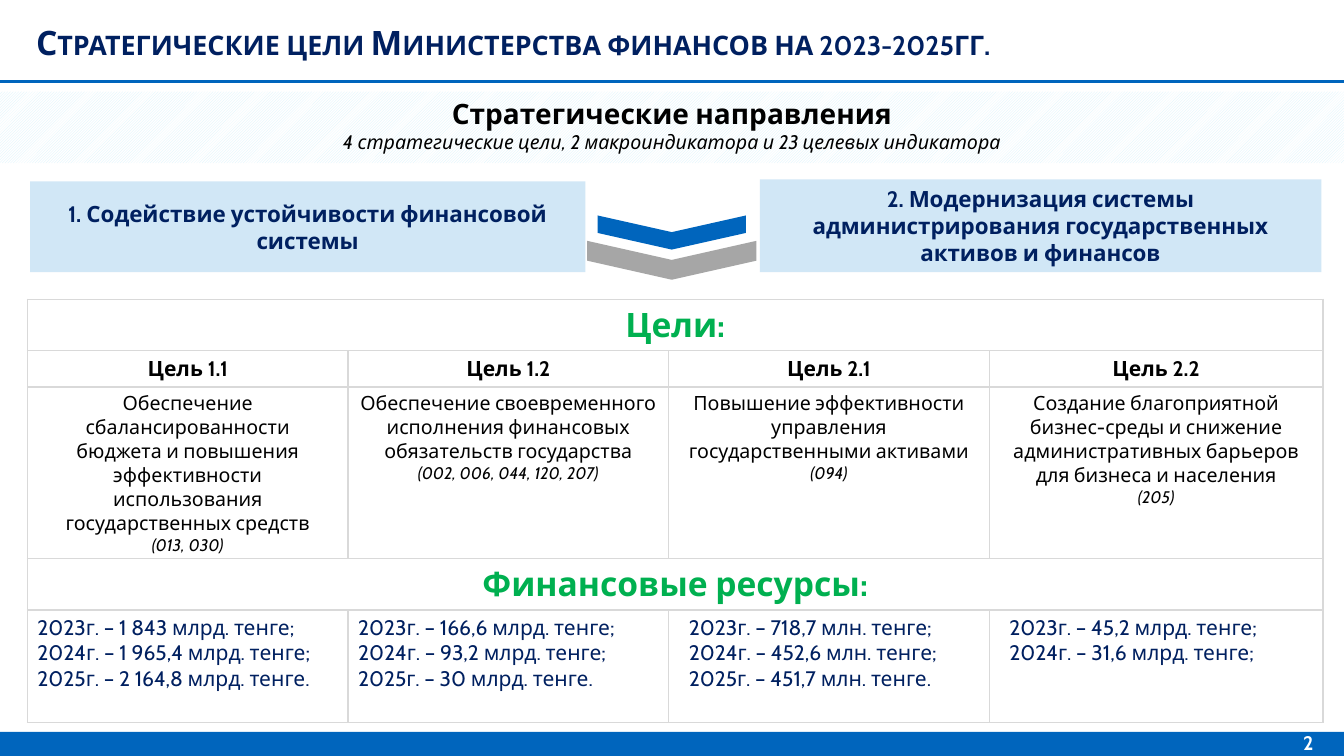
from lxml import etree
from pptx import Presentation
from pptx.dml.color import RGBColor
from pptx.enum.dml import MSO_PATTERN
from pptx.enum.shapes import MSO_CONNECTOR, MSO_SHAPE
from pptx.enum.text import MSO_ANCHOR, PP_ALIGN
from pptx.oxml import parse_xml
from pptx.oxml.ns import nsdecls, qn
from pptx.util import Cm, Pt

BLUE = RGBColor(0x00, 0x65, 0xBD)
NAVY = RGBColor(0x00, 0x20, 0x60)
GREEN = RGBColor(0x00, 0xB0, 0x50)
PALE_BLUE = RGBColor(0xD1, 0xE7, 0xF6)
STRIPE = RGBColor(0xD5, 0xF2, 0xFC)
GRAY = RGBColor(0xA6, 0xA6, 0xA6)
BLACK = RGBColor(0, 0, 0)
WHITE = RGBColor(0xFF, 0xFF, 0xFF)
BORDER = "D9D9D9"


def write(frame, lines, size, color, bold=False, align=PP_ALIGN.CENTER, anchor=MSO_ANCHOR.MIDDLE):
    """Fill a text frame, one paragraph per line, in one style."""
    frame.text = "\n".join(lines)
    frame.word_wrap = True
    frame.vertical_anchor = anchor
    for paragraph in frame.paragraphs:
        paragraph.alignment = align
        font = paragraph.font
        font.name, font.size, font.bold = "Cabin", Pt(size), bold
        font.color.rgb = color


def add_block(kind, left, top, width, height):
    """Add a preset shape without outline or shadow."""
    shape = slide.shapes.add_shape(kind, Cm(left), Cm(top), Cm(width), Cm(height))
    shape.shadow.inherit = False
    shape.line.fill.background()
    return shape


presentation = Presentation()
presentation.slide_width, presentation.slide_height = Cm(33.87), Cm(19.05)
slide = presentation.slides.add_slide(presentation.slide_layouts[6])

# Footer bar and page number
footer = add_block(MSO_SHAPE.RECTANGLE, 0, 18.44, 33.87, 0.61)
footer.fill.solid()
footer.fill.fore_color.rgb = BLUE
page_number = slide.shapes.add_textbox(Cm(32.08), Cm(18.29), Cm(1.78), Cm(0.86))
write(page_number.text_frame, ["2"], 14, WHITE, bold=True, anchor=MSO_ANCHOR.TOP)

# Title and the rule under it
rule = slide.shapes.add_connector(MSO_CONNECTOR.STRAIGHT, 0, Cm(2.06), Cm(33.87), Cm(2.06))
rule.line.color.rgb = BLUE
rule.line.width = Pt(2.25)
etree.SubElement(rule._element.spPr, qn("a:effectLst"))
title = slide.shapes.add_textbox(0, 0, Cm(33.87), Cm(2.11))
write(title.text_frame, ["Стратегические цели Министерства финансов на 2023-2025гг."],
      24, NAVY, bold=True, align=PP_ALIGN.LEFT)
title.text_frame.margin_left = Cm(0.91)
title.text_frame.paragraphs[0].runs[0].font._element.set("cap", "small")

# Striped band
band = add_block(MSO_SHAPE.RECTANGLE, 0, 2.31, 33.87, 1.8)
band.fill.patterned()
band.fill.pattern = MSO_PATTERN.DARK_UPWARD_DIAGONAL
band.fill.fore_color.rgb = STRIPE
band.fill.back_color.rgb = WHITE
write(band.text_frame, ["Стратегические направления",
                        "4 стратегические цели, 2 макроиндикатора и 23 целевых индикатора"],
      20, BLACK, bold=True, anchor=MSO_ANCHOR.TOP)
subtitle_font = band.text_frame.paragraphs[1].font
subtitle_font.size, subtitle_font.bold, subtitle_font.italic = Pt(14), False, True

# Two strategic directions
directions = [
    (0.76, 4.57, 13.99, 2.29, "1. Содействие устойчивости финансовой системы"),
    (19.15, 4.52, 14.15, 2.34,
     "2. Модернизация системы администрирования государственных активов и финансов"),
]
for left, top, width, height, text in directions:
    direction = add_block(MSO_SHAPE.SNIP_2_DIAG_RECTANGLE, left, top, width, height)
    direction.adjustments[0] = direction.adjustments[1] = 0
    direction.fill.solid()
    direction.fill.fore_color.rgb = PALE_BLUE
    write(direction.text_frame, [text], 16, NAVY, bold=True)

# Chevrons between the directions: half width, top, thickness, drop of the tip
center = 16.93
for half, top, thickness, drop, color in [(1.87, 5.43, 0.44, 0.42, BLUE),
                                          (2.13, 6.07, 0.5, 0.48, GRAY)]:
    outline = [(center - half, top), (center - half, top + thickness),
               (center, top + thickness + drop), (center + half, top + thickness),
               (center + half, top), (center, top + drop)]
    points = [(Cm(x), Cm(y)) for x, y in outline]
    builder = slide.shapes.build_freeform(*points[0])
    builder.add_line_segments(points[1:], close=True)
    chevron = builder.convert_to_shape()
    chevron.shadow.inherit = False
    chevron.fill.solid()
    chevron.fill.fore_color.rgb = color
    chevron.line.fill.background()

# Goals: name, description lines, programme codes, yearly funding
goals = [
    ("Цель 1.1", ["Обеспечение сбалансированности",
                  "бюджета и повышения эффективности использования государственных средств"],
     "(013, 030)", ["2023г. – 1 843 млрд. тенге;", "2024г. – 1 965,4 млрд. тенге;",
                    "2025г. – 2 164,8 млрд. тенге."]),
    ("Цель 1.2", ["Обеспечение своевременного исполнения финансовых обязательств государства"],
     "(002, 006, 044, 120, 207)", ["2023г. – 166,6 млрд. тенге;", "2024г. – 93,2 млрд. тенге;",
                                   "2025г. – 30 млрд. тенге."]),
    ("Цель 2.1", ["Повышение эффективности управления государственными активами"],
     "(094)", ["2023г. – 718,7 млн. тенге;", "2024г. – 452,6 млн. тенге;",
               "2025г. – 451,7 млн. тенге."]),
    ("Цель 2.2", ["Создание благоприятной",
                  "бизнес-среды и снижение административных барьеров для бизнеса и населения"],
     "(205)", ["2023г. – 45,2 млрд. тенге;", "2024г. – 31,6 млрд. тенге;"]),
]

# Table grid
column_widths = [8.08, 8.08, 8.08, 8.41]
row_heights = [1.3, 0.91, 3.78, 1.3, 2.84]
table = slide.shapes.add_table(5, 4, Cm(0.69), Cm(7.54), Cm(sum(column_widths)),
                               Cm(sum(row_heights))).table
table.first_row = table.horz_banding = False
for column, width in zip(table.columns, column_widths):
    column.width = Cm(width)
for row, height in zip(table.rows, row_heights):
    row.height = Cm(height)
for cell in table.iter_cells():
    cell.fill.background()
    for position, side in enumerate(("lnL", "lnR", "lnT", "lnB")):
        cell._tc.tcPr.insert(position, parse_xml(
            f'<a:{side} {nsdecls("a")} w="12700"><a:solidFill>'
            f'<a:srgbClr val="{BORDER}"/></a:solidFill></a:{side}>'))

# Section headings across the table
for row, heading in [(0, "Цели:"), (3, "Финансовые ресурсы:")]:
    cell = table.cell(row, 0)
    cell.merge(table.cell(row, 3))
    write(cell.text_frame, [heading], 24, GREEN, bold=True)
    cell.vertical_anchor = MSO_ANCHOR.MIDDLE

# Goal columns
for column, (name, description, codes, funding) in enumerate(goals):
    name_cell, goal_cell, funding_cell = (table.cell(row, column) for row in (1, 2, 4))
    write(name_cell.text_frame, [name], 15, BLACK, bold=True)
    name_cell.vertical_anchor = MSO_ANCHOR.MIDDLE
    write(goal_cell.text_frame, description + [codes], 14, BLACK, anchor=MSO_ANCHOR.TOP)
    codes_font = goal_cell.text_frame.paragraphs[-1].font
    codes_font.size, codes_font.italic = Pt(12), True
    write(funding_cell.text_frame, funding, 15, NAVY, align=PP_ALIGN.LEFT, anchor=MSO_ANCHOR.TOP)
    if column >= 2:
        funding_cell.margin_left = Cm(0.51)

presentation.save("out.pptx")
